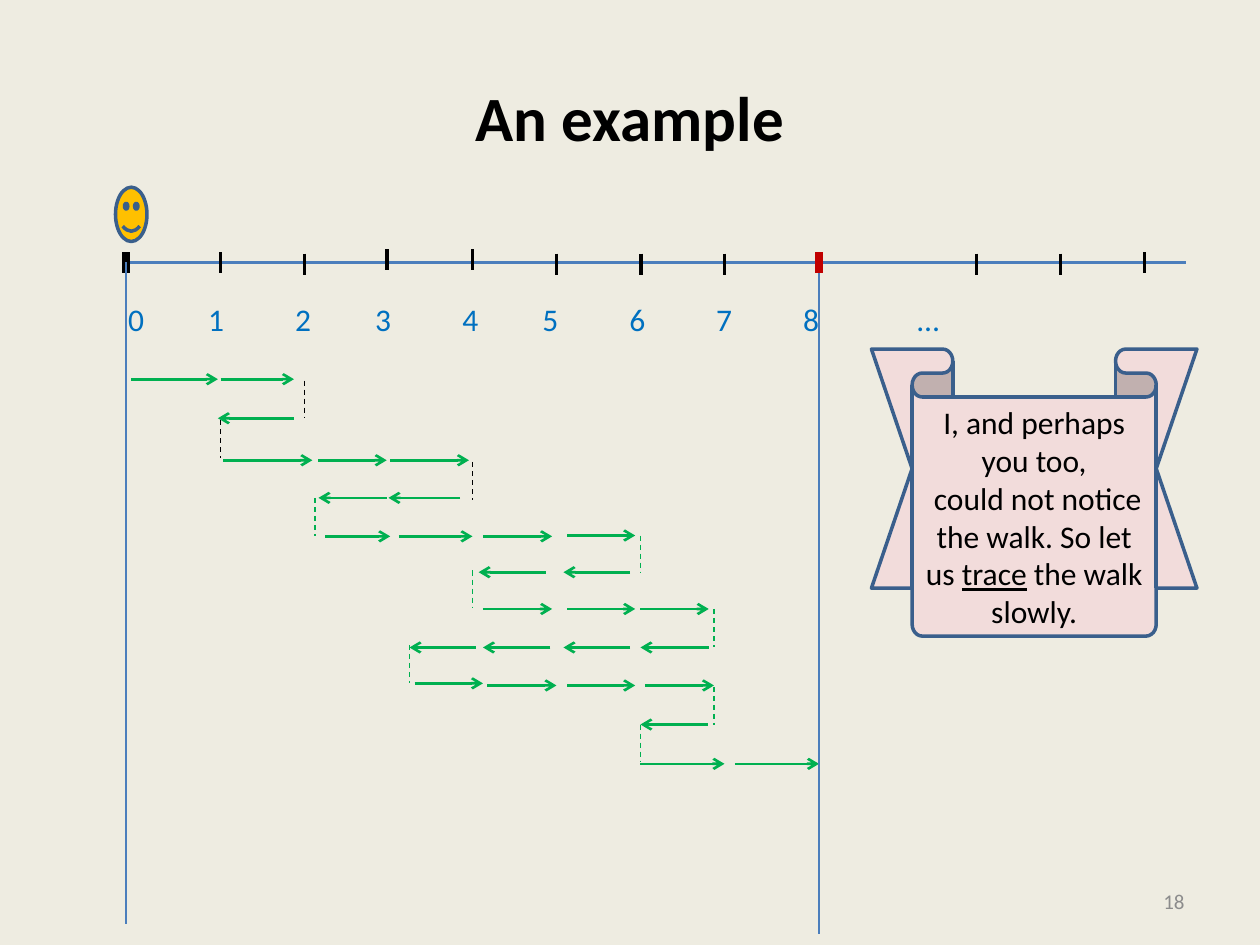
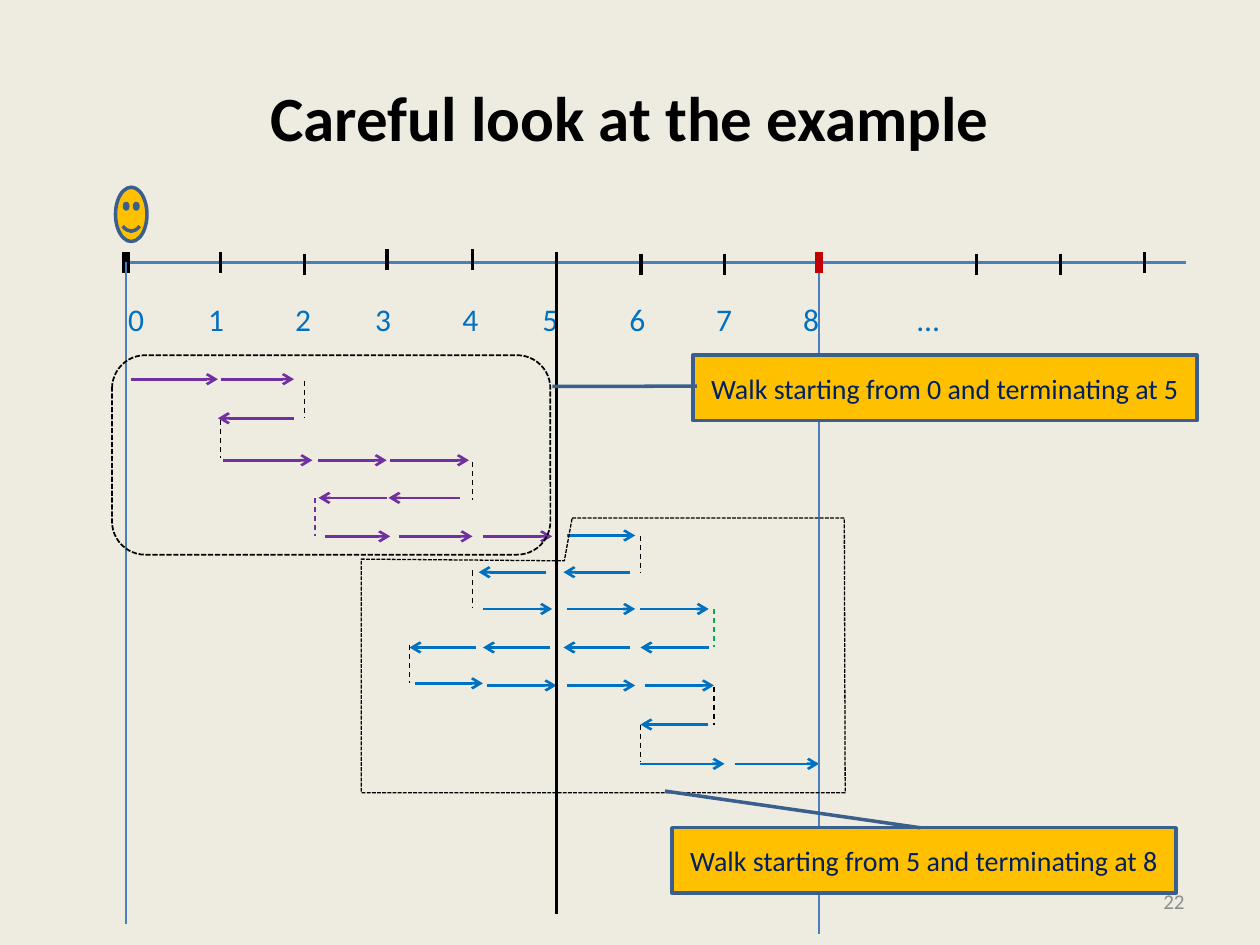
"""Build two slides that trace a random walk on a number line from 0 to 8."""
from lxml import etree
from pptx import Presentation
from pptx import util as u
from pptx.dml import color as c
from pptx.enum import dml, shapes, text
from pptx.oxml import ns

Pt = u.Pt
FONT = "Calibri"
BEIGE = c.RGBColor(0xEE, 0xEC, 0xE1)
BLACK = c.RGBColor(0x00, 0x00, 0x00)
GRAY = c.RGBColor(0x8C, 0x8C, 0x8C)
AXIS_BLUE = c.RGBColor(0x4B, 0x7E, 0xBC)
OUTLINE_BLUE = c.RGBColor(0x3A, 0x5F, 0x8C)
BLUE = c.RGBColor(0x00, 0x70, 0xC0)
NAVY = c.RGBColor(0x00, 0x20, 0x60)
RED = c.RGBColor(0xC0, 0x00, 0x00)
GREEN = c.RGBColor(0x00, 0xB0, 0x50)
PURPLE = c.RGBColor(0x70, 0x30, 0xA0)
GOLD = c.RGBColor(0xFF, 0xC0, 0x00)
PINK = c.RGBColor(0xF2, 0xDC, 0xDB)

DASH = dml.MSO_LINE.DASH
SHORT_DASH = dml.MSO_LINE.SQUARE_DOT
AXIS_START, AXIS_END, AXIS_Y = 72, 678, 150
GOAL = 468
MIDDLE = 318
TICK_HEIGHT = 12
DROP_HEIGHT = 21.6
TICKS = [(126, 144), (174, 145), (221, 142.5), (270, 142.5), (318, 145),
         (366.5, 145), (414, 145), (558, 145), (606, 145), (654, 144)]
LABELS = ["0", "1", "2", "3", "4", "5", "6", "7", "8", "…"]
LABEL_STOPS = [45.7, 95.4, 141.1, 190.9, 236.6, 286.3, 336, 385.7, 450.9]

WALK_TO_5 = [
    (216.7, [(75, 124.5), (126, 168)]),
    (239, [(168, 124.5)]),
    (263, [(127.5, 178.5), (182, 221), (223, 268)]),
    (284.5, [(263, 222), (221, 182)]),
    (306.5, [(186, 223), (228, 270), (276, 315.5)]),
]
WALK_TO_8 = [
    (306, [(324, 363)]),
    (327, [(360, 322), (312, 273.5)]),
    (348, [(276, 315.5), (324, 363), (366, 405)]),
    (370, [(405, 366), (360, 322), (314.5, 276), (272, 234)]),
    (390.5, [(237, 276)]),
    (391.7, [(278.5, 318), (324, 363), (368.5, 408)]),
    (414, [(404.5, 366)]),
    (436.5, [(366, 414), (420, 468)]),
]
EARLY_DROPS = [(174, 217.5), (126, 240), (270, 264)]
LAST_EARLY_DROP = (180, 284.5)
LATE_DROPS = [(366, 306), (270, 326), (234, 368.5), (408, 392.5), (366, 414)]
GREEN_DROP = (408, 348)
LATE_REGION = [(327, 296), (482.5, 296), (483, 453), (206.5, 453),
               (206.5, 319.5), (322.5, 320.5)]
CALLOUTS = [
    ("Walk starting from 5 and terminating at 8", 384, 473,
     (0.001, 0.493, -0.561, -0.014)),
    ("Walk starting from 0 and terminating at 5", 396, 203,
     (0.473, 0.008, 0.478, -0.279)),
]
SLIDES = [
    ("An example", "18", GREEN, GREEN, GREEN),
    ("Careful look at the example", "22", PURPLE, BLUE, BLACK),
]


def write_text(frame, content, size=18, color=BLACK, align=text.PP_ALIGN.CENTER,
               anchor=text.MSO_ANCHOR.MIDDLE, bold=False, wrap=True, underlined=None):
    frame.word_wrap = wrap
    frame.vertical_anchor = anchor
    for index, line in enumerate(content.split("\n")):
        paragraph = frame.add_paragraph() if index else frame.paragraphs[0]
        paragraph.alignment = align
        pieces = line.partition(underlined) if underlined else [line]
        for piece in filter(None, pieces):
            run = paragraph.add_run()
            run.text = piece
            run.font.name = FONT
            run.font.size = Pt(size)
            run.font.bold = bold
            run.font.color.rgb = color
            if piece == underlined:
                run.font.underline = True


def add_line(slide, x1, y1, x2, y2, color, width, dash=None, arrow=False):
    connector = slide.shapes.add_connector(
        shapes.MSO_CONNECTOR.STRAIGHT, Pt(x1), Pt(y1), Pt(x2), Pt(y2))
    connector.line.color.rgb = color
    connector.line.width = Pt(width)
    if dash:
        connector.line.dash_style = dash
    properties = connector.element.spPr
    if arrow:
        etree.SubElement(properties.find(ns.qn("a:ln")), ns.qn("a:tailEnd"), type="arrow")
    etree.SubElement(properties, ns.qn("a:effectLst"))


presentation = Presentation()
presentation.slide_width, presentation.slide_height = Pt(720), Pt(540)
background = presentation.slide_master.background.fill
background.solid()
background.fore_color.rgb = BEIGE

for title_text, number, early_color, late_color, drop_color in SLIDES:
    slide = presentation.slides.add_slide(presentation.slide_layouts[5])
    title = slide.shapes.title
    title.left, title.top, title.width, title.height = Pt(36), Pt(21.6), Pt(648), Pt(90)
    write_text(title.text_frame, title_text, size=36, bold=True)
    number_box = slide.shapes.add_textbox(Pt(516), Pt(500.5), Pt(168), Pt(28.8))
    write_text(number_box.text_frame, number, size=12, color=GRAY,
               align=text.PP_ALIGN.RIGHT)

    add_line(slide, AXIS_START, AXIS_Y, AXIS_END, AXIS_Y, AXIS_BLUE, 1.5)
    for x, top in TICKS:
        add_line(slide, x, top, x, top + TICK_HEIGHT, BLACK, 2.25)
    for x, color in [(AXIS_START, BLACK), (GOAL, RED)]:
        add_line(slide, x, 144, x, 144 + TICK_HEIGHT, color, 4.5)

    label_box = slide.shapes.add_textbox(Pt(66.2), Pt(168), Pt(566), Pt(29))
    write_text(label_box.text_frame, "\t".join(LABELS), color=BLUE, wrap=False,
               align=text.PP_ALIGN.LEFT, anchor=text.MSO_ANCHOR.TOP)
    label_format = label_box.text_frame.paragraphs[0]._p.get_or_add_pPr()
    tab_list = etree.SubElement(label_format, ns.qn("a:tabLst"))
    for stop in LABEL_STOPS:
        etree.SubElement(tab_list, ns.qn("a:tab"), pos=str(Pt(stop)), algn="l")

    walker = slide.shapes.add_shape(
        shapes.MSO_SHAPE.SMILEY_FACE, Pt(66), Pt(107), Pt(18), Pt(31))
    filled_shapes = [(walker, GOLD)]

    for walk, color in [(WALK_TO_5, early_color), (WALK_TO_8, late_color)]:
        for y, steps in walk:
            for start, end in steps:
                add_line(slide, start, y, end, y, color, 1.5, arrow=True)
    drops = [(drop, BLACK) for drop in EARLY_DROPS]
    drops += [(drop, drop_color) for drop in LATE_DROPS]
    drops += [(LAST_EARLY_DROP, early_color), (GREEN_DROP, GREEN)]
    for (x, top), color in drops:
        add_line(slide, x, top, x, top + DROP_HEIGHT, color, 0.75, dash=DASH)

    add_line(slide, GOAL, 156, GOAL, 534, AXIS_BLUE, 0.75)
    add_line(slide, AXIS_START, AXIS_Y, AXIS_START, 528, AXIS_BLUE, 0.75)

    if number == "18":
        ribbon = slide.shapes.add_shape(
            shapes.MSO_SHAPE.DOWN_RIBBON, Pt(498), Pt(199.5), Pt(186), Pt(164))
        ribbon.adjustments[0], ribbon.adjustments[1] = 0.167, 0.75
        write_text(ribbon.text_frame, "I, and perhaps you too,\n could not notice the walk. "
                   "So let us trace the walk slowly.", underlined="trace")
        filled_shapes.append((ribbon, PINK))
    else:
        add_line(slide, MIDDLE, 144, MIDDLE, 522, BLACK, 2.25)
        builder = slide.shapes.build_freeform(*[Pt(value) for value in LATE_REGION[0]])
        builder.add_line_segments([(Pt(x), Pt(y)) for x, y in LATE_REGION[1:]])
        late_region = builder.convert_to_shape()
        early_region = slide.shapes.add_shape(
            shapes.MSO_SHAPE.ROUNDED_RECTANGLE, Pt(64), Pt(203), Pt(250.5), Pt(114))
        for region, width in [(late_region, 0.75), (early_region, 1)]:
            region.shadow.inherit = False
            region.fill.background()
            region.line.color.rgb = BLACK
            region.line.width = Pt(width)
            region.line.dash_style = SHORT_DASH
        for caption, left, top, adjustments in CALLOUTS:
            callout = slide.shapes.add_shape(
                shapes.MSO_SHAPE.LINE_CALLOUT_1, Pt(left), Pt(top), Pt(288), Pt(37.4))
            for index, value in enumerate(adjustments):
                callout.adjustments[index] = value
            write_text(callout.text_frame, caption, size=16, color=NAVY)
            filled_shapes.append((callout, GOLD))

    for shape, color in filled_shapes:
        shape.shadow.inherit = False
        shape.fill.solid()
        shape.fill.fore_color.rgb = color
        shape.line.color.rgb = OUTLINE_BLUE
        shape.line.width = Pt(2)

presentation.save("out.pptx")
